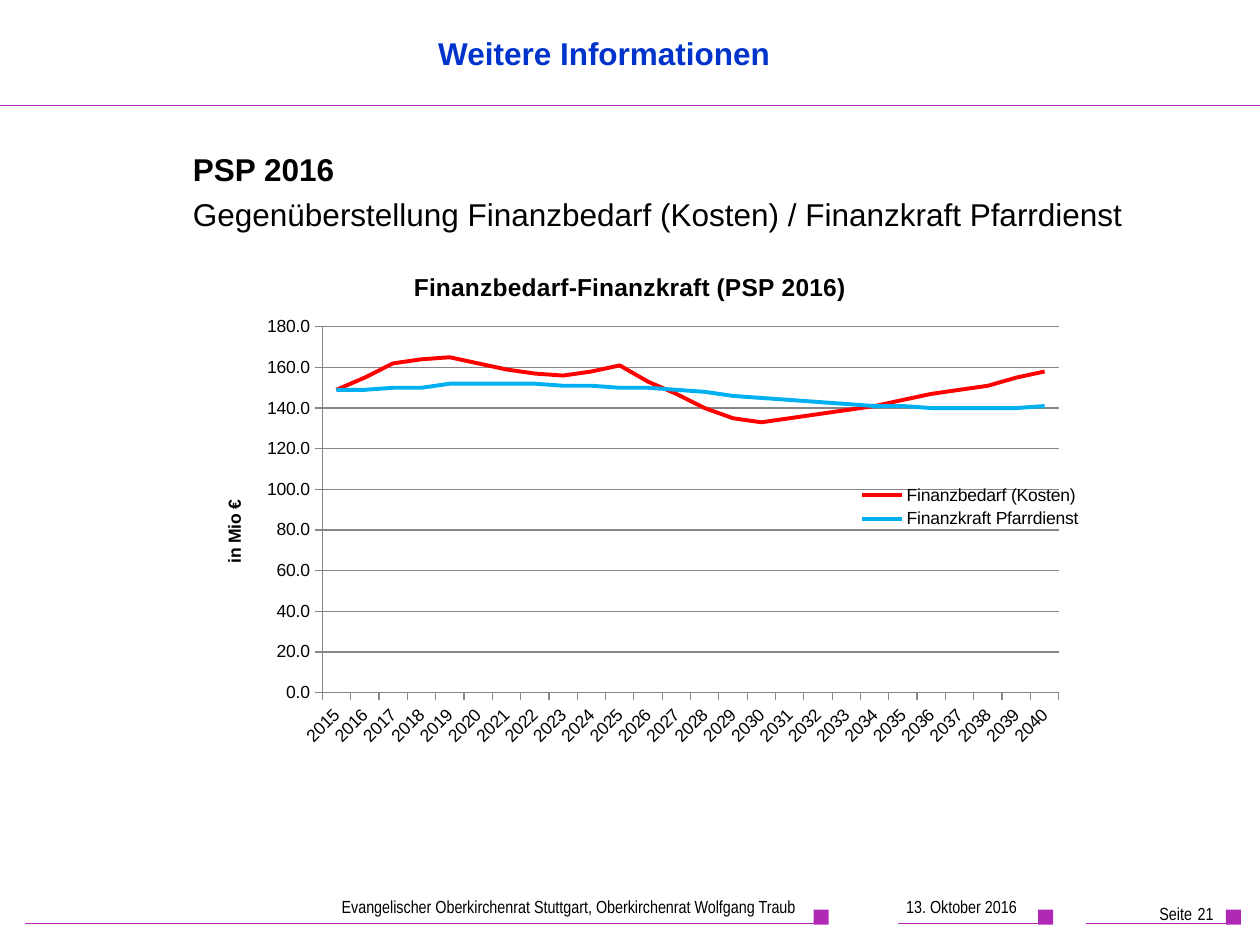
from lxml import etree
from pptx import Presentation
from pptx.chart.data import CategoryChartData
from pptx.dml.color import RGBColor
from pptx.enum.chart import XL_CHART_TYPE, XL_LEGEND_POSITION, XL_TICK_MARK
from pptx.enum.shapes import MSO_CONNECTOR, MSO_SHAPE
from pptx.enum.text import PP_ALIGN
from pptx.oxml import parse_xml
from pptx.oxml.ns import nsdecls, qn
from pptx.util import Pt

LINE_CHART = XL_CHART_TYPE.LINE
LEGEND_RIGHT = XL_LEGEND_POSITION.RIGHT
TICK_OUTSIDE = XL_TICK_MARK.OUTSIDE
STRAIGHT = MSO_CONNECTOR.STRAIGHT
RECTANGLE = MSO_SHAPE.RECTANGLE
LEFT, RIGHT = PP_ALIGN.LEFT, PP_ALIGN.RIGHT

PURPLE, BLACK, BLUE, GREY = "B028B6", "000000", "0033CC", "868686"
FOOTER_LINE_Y = 527.8
FOOTER_RULES = [(14.4, 473), (513.4, 601.2), (620.6, 708.5)]

HEADING = {"size": Pt(18), "name": "Arial", "bold": True}
SUBHEADING = {"size": Pt(18), "name": "Arial", "bold": False}
FOOTER = {"size": Pt(10), "name": "Arial Narrow", "bold": False}
FOOTER_GAP = FOOTER | {"size": Pt(14)}
CHART_TEXT = {"size": Pt(10), "name": "Arial", "bold": False}
CHART_TITLE = CHART_TEXT | {"size": Pt(14), "bold": True}
AXIS_TITLE = CHART_TEXT | {"bold": True}

YEARS = range(2015, 2041)
SERIES = [
    ("Finanzbedarf (Kosten)", "FF0000",
     [149, 155, 162, 164, 165, 162, 159, 157, 156, 158, 161, 153, 147,
      140, 135, 133, 135, 137, 139, 141, 144, 147, 149, 151, 155, 158]),
    ("Finanzkraft Pfarrdienst", "00B0F0",
     [149, 149, 150, 150, 152, 152, 152, 152, 151, 151, 150, 150, 149,
      148, 146, 145, 144, 143, 142, 141, 141, 140, 140, 140, 140, 141]),
]


def color(value):
    return RGBColor.from_string(value)


def format_font(font, formats, value=BLACK):
    for name, setting in formats.items():
        setattr(font, name, setting)
    font.color.rgb = color(value)


def format_line(line, value, width):
    line.color.rgb = color(value)
    line.width = Pt(width)


def add_rule(page, start, end, y, width):
    rule = page.shapes.add_connector(STRAIGHT, Pt(start), Pt(y), Pt(end), Pt(y))
    format_line(rule.line, PURPLE, width)
    etree.SubElement(rule._element.spPr, qn("a:effectLst"))


def add_square(page, left, top, side):
    square = page.shapes.add_shape(RECTANGLE, Pt(left), Pt(top), Pt(side), Pt(side))
    square.shadow.inherit = False
    square.fill.solid()
    square.fill.fore_color.rgb = color(PURPLE)
    square.line.fill.background()


def add_text(page, area, paragraphs, align=RIGHT, value=BLACK, wrap=True, margin=0):
    box = page.shapes.add_textbox(*map(Pt, area))
    frame = box.text_frame
    frame.word_wrap = wrap
    for index, spans in enumerate(paragraphs):
        para = frame.add_paragraph() if index else frame.paragraphs[0]
        para.alignment = align
        if margin:
            para._p.get_or_add_pPr().set("marL", str(int(Pt(margin))))
        if index:
            para.space_before = Pt(4)
        for text, formats in spans:
            span = para.add_run()
            span.text = text
            format_font(span.font, formats, value)


def place(element, inner=False, **ratios):
    layout = element.find(qn("c:layout"))
    if layout is None:
        layout = parse_xml(f"<c:layout {nsdecls('c')}/>")
        element.insert_element_before(layout, "c:overlay", "c:spPr", "c:txPr")
    for child in list(layout):
        layout.remove(child)
    manual = etree.SubElement(layout, qn("c:manualLayout"))
    settings = [("layoutTarget", "inner")] if inner else []
    settings += [("xMode", "edge"), ("yMode", "edge"), *ratios.items()]
    for name, setting in settings:
        etree.SubElement(manual, qn(f"c:{name}")).set("val", str(setting))


def set_title(owner, text, formats):
    frame = owner.text_frame
    frame.text = text
    format_font(frame.paragraphs[0].runs[0].font, formats)


def format_axes(chart):
    for axis in (chart.category_axis, chart.value_axis):
        axis.major_tick_mark = TICK_OUTSIDE
        format_line(axis.format.line, GREY, 0.75)
        format_font(axis.tick_labels.font, CHART_TEXT)
    labels = chart.category_axis._element.find(qn("c:txPr"))
    labels.find(qn("a:bodyPr")).set("rot", "-2700000")

    values = chart.value_axis
    values.minimum_scale, values.maximum_scale, values.major_unit = 0, 180, 20
    values.has_major_gridlines = True
    format_line(values.major_gridlines.format.line, GREY, 0.75)
    values.tick_labels.number_format = "#,##0.0"
    values.tick_labels.number_format_is_linked = False
    set_title(values.axis_title, "in Mio €", AXIS_TITLE)
    place(values.axis_title._element, x=0.06, y=0.48)


def add_line_chart(page, area):
    data = CategoryChartData(number_format="#,##0.0")
    data.categories = [str(year) for year in YEARS]
    for name, _, numbers in SERIES:
        data.add_series(name, numbers)
    chart = page.shapes.add_chart(LINE_CHART, *map(Pt, area), data).chart
    format_font(chart.font, CHART_TEXT)

    chart.has_title = True
    set_title(chart.chart_title, "Finanzbedarf-Finanzkraft (PSP 2016)", CHART_TITLE)
    format_axes(chart)

    plot = chart.plots[0]
    plot.vary_by_categories = False
    for series, (_, value, _) in zip(plot.series, SERIES):
        series.smooth = False
        format_line(series.format.line, value, 2.25)

    chart.has_legend = True
    chart.legend.position = LEGEND_RIGHT
    chart.legend.include_in_layout = True
    format_font(chart.legend.font, CHART_TEXT)
    place(chart.legend._element, x=0.74, y=0.45, w=0.25, h=0.1)
    plot_area = chart._chartSpace.chart.plotArea
    place(plot_area, inner=True, x=0.17, y=0.15, w=0.79, h=0.71)


def add_footer(page):
    for start, end in FOOTER_RULES:
        add_rule(page, start, end, FOOTER_LINE_Y, 0.75)
        add_square(page, end - 8, FOOTER_LINE_Y - 8, 8.6)
    organisation = "Evangelischer Oberkirchenrat Stuttgart, Oberkirchenrat Wolfgang Traub"
    add_text(page, (19.4, 508.3, 442, 23), [[(organisation, FOOTER)]])
    add_text(page, (471, 508.3, 117, 22.3), [[("13. Oktober 2016", FOOTER)]])
    number = [("Seite", FOOTER), (" ", FOOTER_GAP), ("21", FOOTER)]
    add_text(page, (612.7, 508.3, 87.8, 22.3), [number])


def main():
    deck = Presentation()
    deck.slide_width, deck.slide_height = Pt(720), Pt(540)
    page = deck.slides.add_slide(deck.slide_layouts[6])
    add_footer(page)
    add_rule(page, 0, 720, 60.3, 1)
    body = [
        [("PSP 2016", HEADING)],
        [("Gegenüberstellung Finanzbedarf (Kosten) / Finanzkraft Pfarrdienst", SUBHEADING)],
    ]
    add_text(page, (25.2, 82, 657.4, 336), body, align=LEFT, margin=78)
    add_line_chart(page, (93.6, 142.6, 532.8, 294.5))
    add_text(page, (241.2, 15.8, 206, 28.8), [[("Weitere Informationen", HEADING)]],
             value=BLUE, wrap=False)
    deck.save("out.pptx")


if __name__ == "__main__":
    main()
